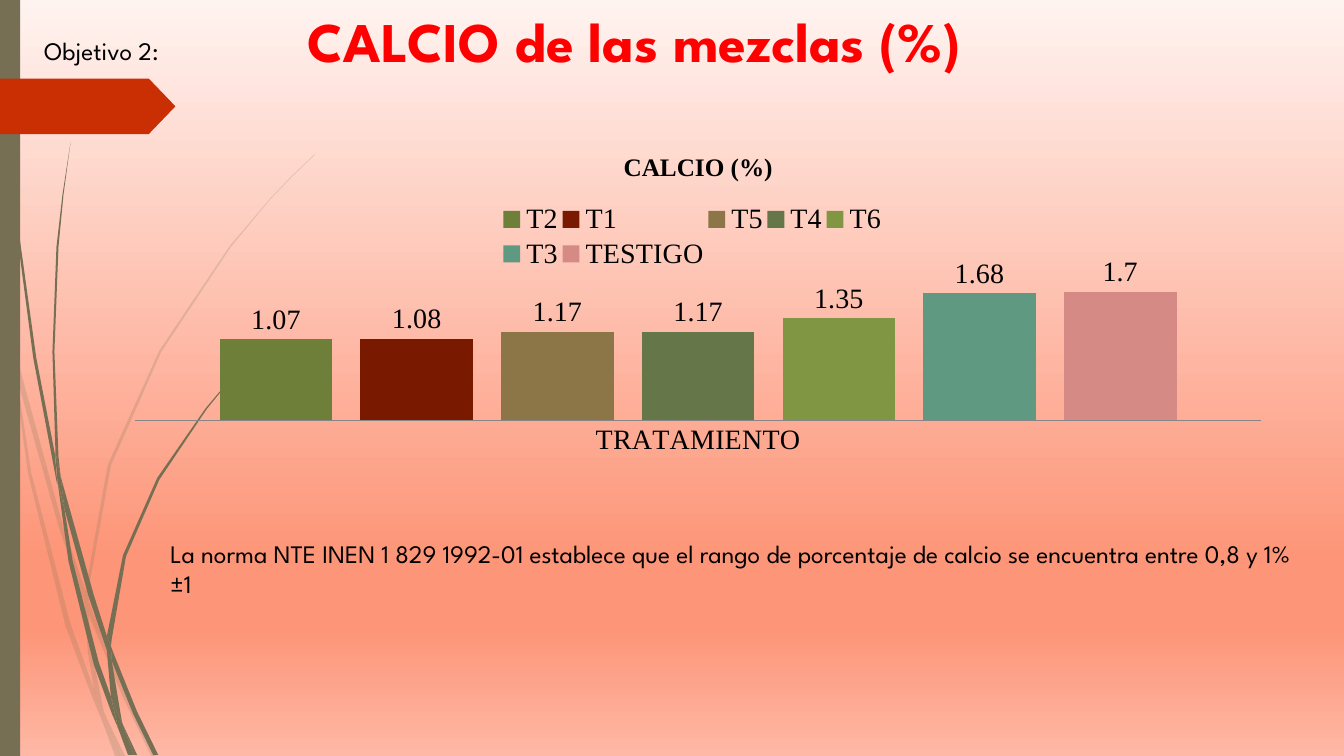
from copy import deepcopy
from dataclasses import dataclass

from lxml import etree
from pptx import Presentation
from pptx.chart.data import CategoryChartData
from pptx.dml.color import RGBColor
from pptx.enum.chart import XL_CHART_TYPE, XL_LABEL_POSITION, XL_LEGEND_POSITION, XL_TICK_MARK
from pptx.enum.shapes import MSO_SHAPE
from pptx.enum.text import MSO_ANCHOR, PP_ALIGN
from pptx.oxml.ns import qn
from pptx.util import Pt

COLUMNS = XL_CHART_TYPE.COLUMN_CLUSTERED
OUTSIDE = XL_LABEL_POSITION.OUTSIDE_END
LEGEND_TOP = XL_LEGEND_POSITION.TOP
NO_TICK = XL_TICK_MARK.NONE
RECTANGLE, ARROW_TAG = MSO_SHAPE.RECTANGLE, MSO_SHAPE.PENTAGON
TOP, LEFT = MSO_ANCHOR.TOP, PP_ALIGN.LEFT
PX = 9144  # EMU in one px, 100 px to the inch


@dataclass(frozen=True)
class Theme:
    font: str = "League Spartan"
    chart_font: str = "Times New Roman"
    ink: str = "000000"
    heading: str = "FF0000"
    stem: str = "766F54"
    tag: str = "CA2F03"
    axis: str = "868686"
    title_size: int = 40
    text_size: int = 18
    chart_size: int = 20


THEME = Theme()

# Content
TITLE = ("CALCIO de las mezclas (%)", (295, 1, 880, 77))
NOTES = [
    ("La norma NTE INEN 1 829 1992-01 establece que el rango de porcentaje de "
     "calcio se encuentra entre 0,8 y 1% ±1", (159, 529, 1151, 71)),
    ("Objetivo 2:", (34, 30, 251, 40)),
]
CHART_TITLE, CATEGORY = "CALCIO (%)", "TRATAMIENTO"
CHART_BOX = (111, 134, 1163, 325)
PLOT_AREA = (0.02, 0.41, 0.96, 0.46)
LEGEND_AREA = (0.33, 0.2, 0.33, 0.22)
TREATMENTS = [
    ("T2", 1.07, "6D7F39"), ("T1", 1.08, "791A00"), ("T5", 1.17, "8C7647"),
    ("T4", 1.17, "657649"), ("T6", 1.35, "819642"), ("T3", 1.68, "5F9982"),
    ("TESTIGO", 1.7, "D58A85"),
]
BACKGROUND = [(0, "FFF3F0"), (0.74, "FD9578"), (0.83, "FD9578"), (1, "FEB8A5")]

# Grass blades: outlines as (x, y) corners
PALE_BLADES = [
    [(11, 350), (9, 322), (0, 282), (0, 299), (10, 344)],
    [(58, 522), (84, 599), (85, 586), (62, 520), (14, 345), (17, 376)],
    [(92, 607), (88, 596), (88, 610), (123, 694), (150, 750), (155, 750), (127, 692)],
    [(119, 750), (124, 750), (105, 711)],
    [(93, 683), (70, 619), (31, 469), (17, 376), (11, 350), (28, 470), (65, 621),
     (92, 693), (101, 714), (99, 707)],
    [(84, 599), (87, 646), (93, 683), (96, 692), (105, 711), (103, 706), (91, 646),
     (88, 610), (88, 608)],
    [(88, 584), (110, 462), (160, 349), (229, 245), (268, 198), (290, 175), (312, 154),
     (312, 153), (289, 175), (268, 197), (228, 244), (158, 348), (107, 461), (85, 584),
     (85, 586), (88, 596)],
    [(101, 714), (114, 750), (119, 750)],
    [(88, 608), (88, 610), (88, 596), (85, 586), (84, 599)],
    [(96, 692), (93, 683), (99, 707), (101, 714), (119, 750), (105, 711)],
]
SOLID_BLADES = [
    [(7, 110), (17, 233), (33, 355), (56, 477), (57, 481), (55, 457), (55, 453),
     (36, 355), (19, 232), (8, 109), (5, 48), (4, 0), (3, 0), (4, 48)],
    [(88, 592), (106, 645), (106, 633), (106, 631), (93, 590), (60, 472), (64, 505)],
    [(113, 649), (110, 641), (111, 656), (132, 708), (152, 749), (157, 749), (136, 706)],
    [(110, 691), (98, 657), (72, 556), (64, 505), (57, 477), (68, 557), (93, 659),
     (111, 708), (117, 722), (116, 717)],
    [(60, 472), (58, 453), (54, 349), (58, 245), (63, 193), (70, 141), (62, 193),
     (56, 245), (52, 349), (55, 449)],
    [(133, 749), (136, 749), (122, 719)],
    [(57, 477), (64, 505), (60, 472), (55, 449), (55, 453)],
    [(111, 633), (125, 552), (158, 476), (205, 406), (231, 374), (245, 359), (261, 344),
     (260, 344), (245, 358), (231, 373), (204, 405), (156, 474), (122, 551), (106, 631),
     (110, 641)],
    [(117, 722), (127, 749), (131, 749)],
    [(106, 645), (110, 691), (116, 706), (122, 719), (121, 716), (111, 656), (109, 651)],
    [(106, 645), (109, 651), (111, 656), (110, 641), (106, 631), (106, 633)],
    [(116, 706), (110, 691), (116, 717), (117, 722), (130, 749), (133, 749), (122, 719)],
]
BLADES = [(20, PALE_BLADES), (100, SOLID_BLADES)]  # opacity in percent


def color(value):
    return RGBColor.from_string(value)


def scaled(lengths):
    return [length * PX for length in lengths]


def paint(shape, value, opacity=100):
    shape.shadow.inherit = False
    shape.fill.solid()
    shape.fill.fore_color.rgb = color(value)
    shape.line.fill.background()
    if opacity < 100:
        tint = shape.fill._xPr.find(".//" + qn("a:srgbClr"))
        etree.SubElement(tint, qn("a:alpha"), val=str(opacity * 1000))


def write(frame, text, size=THEME.text_size, ink=THEME.ink, bold=False):
    frame.word_wrap = True
    frame.vertical_anchor = TOP
    para = frame.paragraphs[0]
    para.alignment = LEFT
    span = para.add_run()
    span.text = text
    span.font.name, span.font.size, span.font.bold = THEME.font, Pt(size), bold
    span.font.color.rgb = color(ink)


def place(parent, index, area):
    """Give a chart part a fixed place, as fractions of the chart."""
    for old in parent.findall(qn("c:layout")):
        parent.remove(old)
    layout = etree.Element(qn("c:layout"))
    manual = etree.SubElement(layout, qn("c:manualLayout"))
    if parent.tag == qn("c:plotArea"):
        etree.SubElement(manual, qn("c:layoutTarget"), val="inner")
    for name in ("xMode", "yMode"):
        etree.SubElement(manual, qn("c:" + name), val="edge")
    for name, value in zip("xywh", area):
        etree.SubElement(manual, qn("c:" + name), val=str(value))
    parent.insert(index, layout)


def add_background(page):
    fill = page.background.fill
    fill.gradient()
    fill.gradient_angle = 270
    stops = page.element.find(".//" + qn("a:gsLst"))
    while len(stops) < len(BACKGROUND):
        stops.append(deepcopy(stops[-1]))
    for stop, (position, value) in zip(fill.gradient_stops, BACKGROUND):
        stop.position = position
        stop.color.rgb = color(value)


def add_decoration(page):
    for opacity, blades in BLADES:
        for blade in blades:
            start, *corners = [scaled(corner) for corner in blade]
            builder = page.shapes.build_freeform(*start)
            builder.add_line_segments(corners, close=True)
            paint(builder.convert_to_shape(), THEME.stem, opacity)
    paint(page.shapes.add_shape(RECTANGLE, *scaled((0, 0, 20, 750))), THEME.stem)
    tag = page.shapes.add_shape(ARROW_TAG, *scaled((0, 78, 174, 55)))
    tag.adjustments[0] = 0.48
    paint(tag, THEME.tag)


def add_calcium_chart(page):
    data = CategoryChartData()
    data.categories = [CATEGORY]
    for name, value, _ in TREATMENTS:
        data.add_series(name, [value])
    chart = page.shapes.add_chart(COLUMNS, *scaled(CHART_BOX), data).chart
    chart.font.name, chart.font.size = THEME.chart_font, Pt(THEME.chart_size)
    chart.font.color.rgb = color(THEME.ink)

    # Heading and legend
    chart.has_title = True
    heading = chart.chart_title.text_frame
    heading.text = CHART_TITLE
    font = heading.paragraphs[0].runs[0].font
    font.name, font.size, font.bold = THEME.chart_font, Pt(THEME.text_size), True
    font.color.rgb = color(THEME.ink)
    chart.has_legend = True
    chart.legend.position = LEGEND_TOP
    chart.legend.include_in_layout = False
    place(chart.legend._element, 1, LEGEND_AREA)
    place(chart._chartSpace.find(".//" + qn("c:plotArea")), 0, PLOT_AREA)

    # Axes
    chart.value_axis.minimum_scale, chart.value_axis.maximum_scale = 0, 2
    chart.value_axis.has_major_gridlines = False
    chart.value_axis.visible = False
    chart.category_axis.major_tick_mark = NO_TICK
    chart.category_axis.format.line.color.rgb = color(THEME.axis)
    chart.category_axis.format.line.width = Pt(0.5)

    # Columns
    plot = chart.plots[0]
    plot.gap_width, plot.overlap, plot.vary_by_categories = 150, -25, False
    for series, (_, _, value) in zip(plot.series, TREATMENTS):
        series.format.fill.solid()
        series.format.fill.fore_color.rgb = color(value)
        series.data_labels.show_value = True
        series.data_labels.position = OUTSIDE


def main():
    deck = Presentation()
    deck.slide_width, deck.slide_height = 1333 * PX, 750 * PX
    page = deck.slides.add_slide(deck.slide_layouts[5])
    add_background(page)
    add_decoration(page)
    text, box = TITLE
    title = page.shapes.title
    title.left, title.top, title.width, title.height = scaled(box)
    write(title.text_frame, text, THEME.title_size, THEME.heading, bold=True)
    for text, box in NOTES:
        write(page.shapes.add_textbox(*scaled(box)).text_frame, text)
    add_calcium_chart(page)
    deck.save("out.pptx")


if __name__ == "__main__":
    main()
